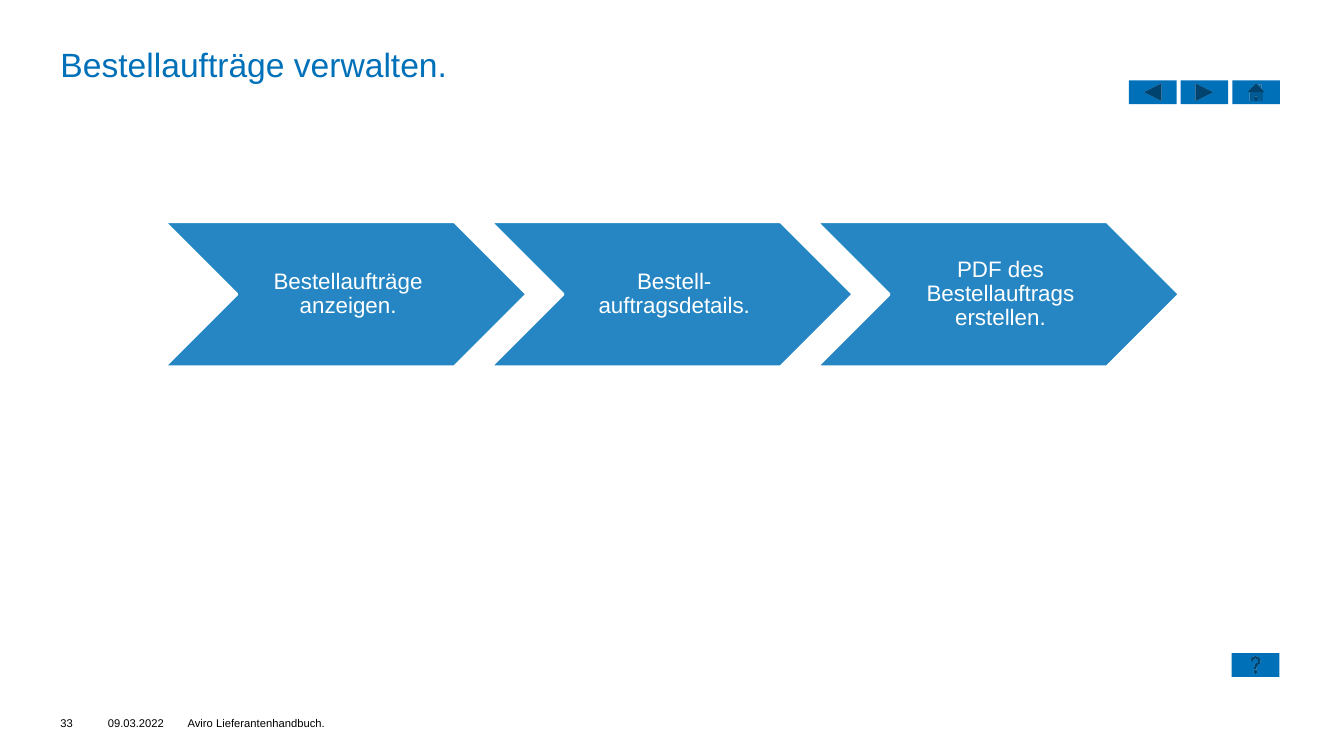
"""Builds the slide on managing purchase orders: three process steps and navigation buttons."""
import pptx
import pptx.dml.color
import pptx.enum.shapes
import pptx.enum.text
import pptx.util

Pt = pptx.util.Pt
SHAPE = pptx.enum.shapes.MSO_SHAPE
ANCHOR = pptx.enum.text.MSO_ANCHOR
COLORS = {"blue": "0071B9", "step": "2586C3", "white": "FFFFFF", "black": "000000"}


def rgb(name):
    return pptx.dml.color.RGBColor.from_string(COLORS[name])


def write(shape, text, size, color, anchor, margins=(0, 0, 0, 0)):
    frame = shape.text_frame
    frame.word_wrap = True
    frame.vertical_anchor = anchor
    frame.margin_left, frame.margin_top, frame.margin_right, frame.margin_bottom = map(Pt, margins)
    paragraph = frame.paragraphs[0]
    paragraph.text = text
    paragraph.font.name = "Arial"
    paragraph.font.size = Pt(size)
    paragraph.font.color.rgb = rgb(color)
    return paragraph


deck = pptx.Presentation()
deck.slide_width, deck.slide_height = Pt(960), Pt(540)
shapes = deck.slides.add_slide(deck.slide_layouts[6]).shapes

title = shapes.add_textbox(Pt(43.2), Pt(31.7), Pt(872.6), Pt(33.8))
write(title, "Bestellaufträge verwalten.", 24, "blue", ANCHOR.TOP)

footer = [
    (43.2, 28, "33"),
    (77, 51, "09.03.2022"),
    (134, 516, "Aviro Lieferantenhandbuch."),
]
for left, width, text in footer:
    entry = shapes.add_textbox(Pt(left), Pt(493.2), Pt(width), Pt(28))
    write(entry, text, 8, "black", ANCHOR.BOTTOM)

steps = [
    "Bestellaufträge anzeigen.",
    "Bestell-auftragsdetails.",
    "PDF des Bestellauftrags erstellen.",
]
for index, text in enumerate(steps):
    step = shapes.add_shape(SHAPE.CHEVRON, Pt(117.4 + 233 * index), Pt(158.4), Pt(259), Pt(103.6))
    step.shadow.inherit = False
    step.fill.solid()
    step.fill.fore_color.rgb = rgb("step")
    step.line.color.rgb = rgb("white")
    step.line.width = Pt(2)
    label = write(step, text, 16, "white", ANCHOR.MIDDLE, (5, 1.5, 1.5, 1.5))
    label.alignment = pptx.enum.text.PP_ALIGN.CENTER
    label.line_spacing = 0.9

buttons = [
    (SHAPE.ACTION_BUTTON_BACK_OR_PREVIOUS, 806.4, 57.4),
    (SHAPE.ACTION_BUTTON_FORWARD_OR_NEXT, 843.3, 57.4),
    (SHAPE.ACTION_BUTTON_HOME, 880.2, 57.4),
    (SHAPE.ACTION_BUTTON_HELP, 879.8, 466.5),
]
for kind, left, top in buttons:
    button = shapes.add_shape(kind, Pt(left), Pt(top), Pt(34), Pt(17))
    button.shadow.inherit = False
    button.fill.solid()
    button.fill.fore_color.rgb = rgb("blue")
    button.line.fill.background()

deck.save("out.pptx")
